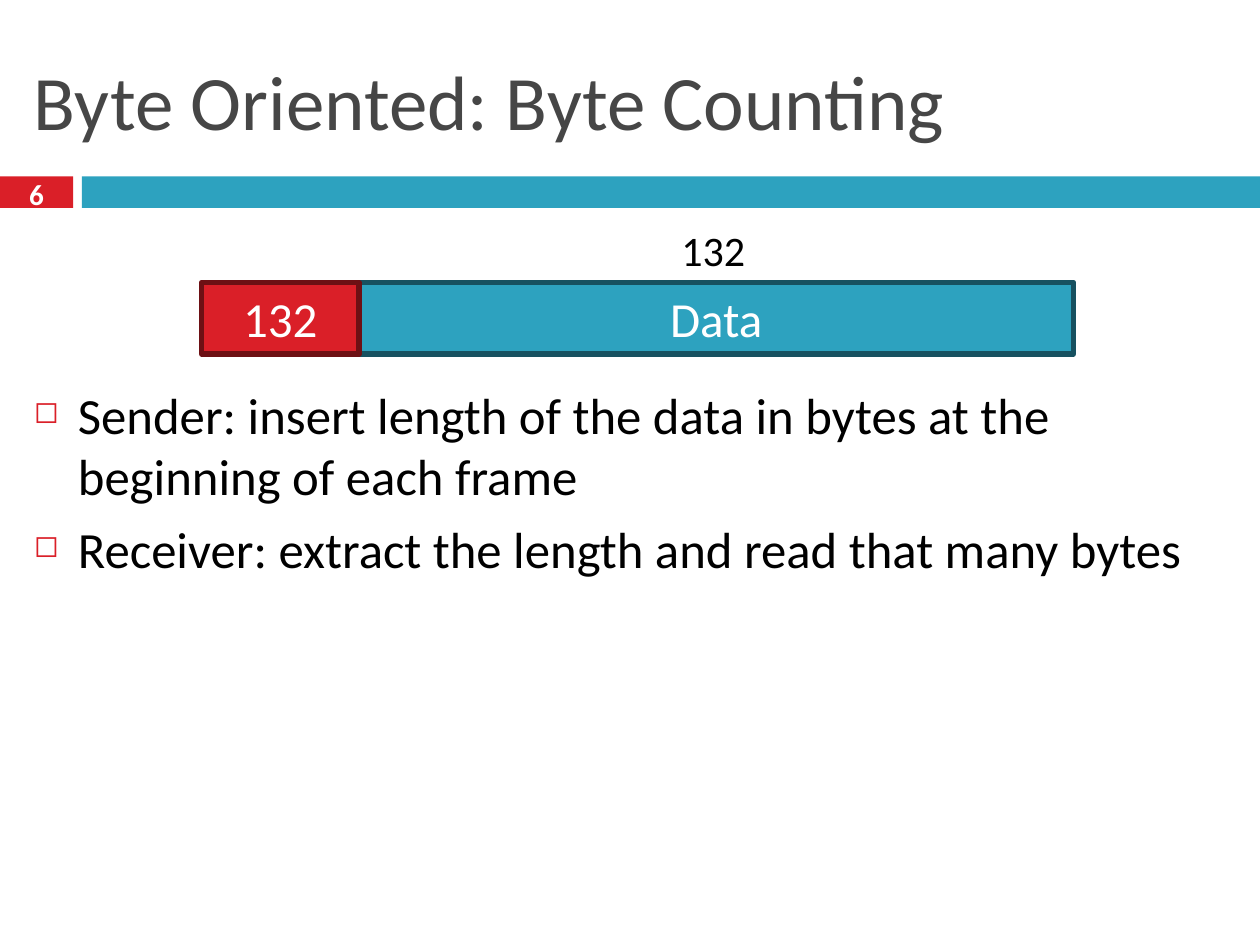
from lxml import etree
from pptx import Presentation
from pptx import util as u
from pptx.dml.color import RGBColor
from pptx.enum import shapes, text
from pptx.oxml.ns import qn

HUES = {
    "red": "DA1F28",
    "wine": "6D1014",
    "teal": "2DA2BF",
    "deep": "175160",
    "gray": "464646",
    "black": "000000",
    "white": "FFFFFF",
}
FONT = "Calibri"
LEFT = text.PP_ALIGN.LEFT
MID = text.PP_ALIGN.CENTER


def hue(name):
    return RGBColor.from_string(HUES[name])


def write(frame, lines, size, color, align=LEFT, bold=False):
    frame.text = "\n".join(lines)
    for para in frame.paragraphs:
        para.alignment = align
        for run in para.runs:
            run.font.name = FONT
            run.font.size = u.Pt(size)
            run.font.bold = bold
            run.font.color.rgb = hue(color)


def add_bar(slide, box, fill, edge=None):
    bar = slide.shapes.add_shape(
        shapes.MSO_SHAPE.RECTANGLE, *map(u.Inches, box))
    bar.shadow.inherit = False
    bar.fill.solid()
    bar.fill.fore_color.rgb = hue(fill)
    if edge:
        bar.line.color.rgb = hue(edge)
        bar.line.width = u.Pt(3)
    else:
        bar.line.fill.background()
    return bar


def add_field(slide, box, label, fill, edge):
    bar = add_bar(slide, box, fill, edge)
    write(bar.text_frame, [label], 28, "white", MID)


def add_text(slide, box, lines, size, color, align=LEFT, bold=False,
             anchor=text.MSO_ANCHOR.TOP, wrap=True):
    frame = slide.shapes.add_textbox(*map(u.Inches, box)).text_frame
    frame.word_wrap = wrap
    frame.vertical_anchor = anchor
    write(frame, lines, size, color, align, bold)
    return frame


def add_marks(frame):
    for para in frame.paragraphs:
        para.space_before = u.Pt(7)
        props = para._p.get_or_add_pPr()
        props.set("marL", str(u.Inches(0.35)))
        props.set("indent", str(-u.Inches(0.35)))
        tint = etree.SubElement(props, qn("a:buClr"))
        etree.SubElement(tint, qn("a:srgbClr"), val=HUES["red"])
        etree.SubElement(props, qn("a:buSzPct"), val="60000")
        etree.SubElement(props, qn("a:buChar"), char="◻")


def main():
    deck = Presentation()
    deck.slide_width, deck.slide_height = u.Inches(10), u.Inches(7.5)
    slide = deck.slides.add_slide(deck.slide_layouts[6])
    center = text.MSO_ANCHOR.MIDDLE

    add_bar(slide, (0, 1.4, 0.58, 0.25), "red")
    add_bar(slide, (0.65, 1.4, 9.35, 0.25), "teal")
    add_text(slide, (0.17, 0.25, 9.67, 1.08),
             ["Byte Oriented: Byte Counting"], 44, "gray", anchor=center)
    add_text(slide, (0, 1.37, 0.58, 0.33), ["6"], 16.6, "white",
             MID, True, center)

    body = add_text(slide, (0.17, 3, 9.67, 4.33), [
        "Sender: insert length of the data in bytes at the "
        "beginning of each frame",
        "Receiver: extract the length and read that many bytes",
    ], 29, "black")
    add_marks(body)

    add_field(slide, (2.85, 2.24, 5.67, 0.57), "Data", "teal", "deep")
    add_text(slide, (5.31, 1.73, 0.76, 0.5), ["132"], 24, "black", wrap=False)
    add_field(slide, (1.6, 2.24, 1.25, 0.57), "132", "red", "wine")

    deck.save("out.pptx")


if __name__ == "__main__":
    main()
